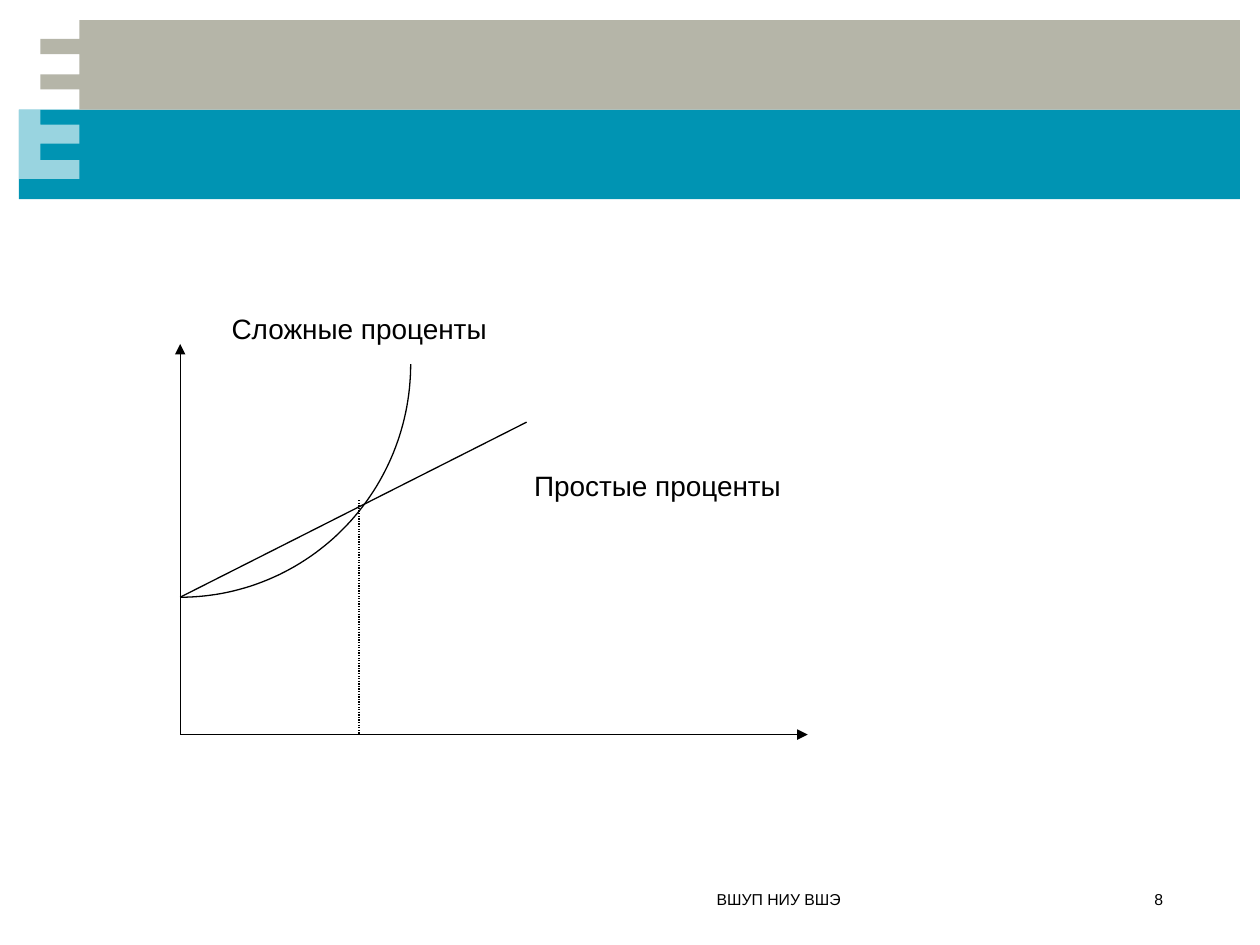
from math import cos, pi, sin

from pptx import Presentation
from pptx.dml.color import RGBColor
from pptx.enum.dml import MSO_LINE_DASH_STYLE as Dash
from pptx.enum.shapes import MSO_CONNECTOR as Connector, MSO_SHAPE as Shape
from pptx.enum.text import MSO_ANCHOR as Anchor, PP_ALIGN as Align
from pptx.oxml.ns import qn
from pptx.util import Inches, Pt
from lxml.etree import SubElement

BLACK, WHITE, TEAL, STONE = "000000", "FFFFFF", "0094B3", "B5B5A8"


def paint(fmt, colour):
    fmt.solid()
    fmt.fore_color.rgb = RGBColor.from_string(colour)


def outline(points, closed=True):
    corners = [(Inches(x), Inches(y)) for x, y in points]
    builder = slide.shapes.build_freeform(*corners[0])
    builder.add_line_segments(corners[1:], close=closed)
    drawn = builder.convert_to_shape()
    drawn.shadow.inherit = False
    return drawn


prs = Presentation()
prs.slide_width, prs.slide_height = Inches(10), Inches(7.5)
slide = prs.slides.add_slide(prs.slide_layouts[6])

teal_band = slide.shapes.add_shape(
    Shape.RECTANGLE, Inches(0.15), Inches(0.87), Inches(9.69), Inches(0.71))
teal_band.shadow.inherit = False
paint(teal_band.fill, TEAL)
teal_band.line.fill.background()

stone_band = outline([
    (0.63, 0.16), (9.84, 0.16), (9.84, 0.87), (0.63, 0.87), (0.63, 0.71), (0.32, 0.71),
    (0.32, 0.59), (0.63, 0.59), (0.63, 0.43), (0.32, 0.43), (0.32, 0.31), (0.63, 0.31)])
pale_comb = outline([
    (0.63, 1.42), (0.63, 1.27), (0.32, 1.27), (0.32, 1.14), (0.63, 1.14),
    (0.63, 0.99), (0.32, 0.99), (0.32, 0.87), (0.15, 0.87), (0.15, 1.42)])
for emblem, colour in [(stone_band, STONE), (pale_comb, WHITE)]:
    paint(emblem.fill, colour)
    emblem.line.fill.background()
white = pale_comb.fill._xPr.find(qn("a:solidFill"))[0]
SubElement(white, qn("a:alpha"), val="60000")

origin_x, origin_y, start_y = 1.43, 5.83, 4.74
for begin, end, arrow, dash in [
    ((origin_x, origin_y), (origin_x, 2.73), True, None),
    ((origin_x, origin_y), (6.41, origin_y), True, None),
    ((origin_x, start_y), (4.18, 3.35), False, None),
    ((2.85, 3.97), (2.85, origin_y), False, Dash.ROUND_DOT),
]:
    stroke = slide.shapes.add_connector(
        Connector.STRAIGHT, *(Inches(v) for v in begin + end))
    paint(stroke.line.fill, BLACK)
    stroke.line.width = Pt(0.75)
    if dash:
        stroke.line.dash_style = dash
    if arrow:
        SubElement(stroke.line._get_or_add_ln(), qn("a:tailEnd"), type="triangle")
    SubElement(stroke._element.spPr, qn("a:effectLst"))

radius_x, radius_y, steps = 1.83, 1.85, 60
angles = [pi / 2 * i / steps for i in range(steps + 1)]
compound_curve = outline(
    [(origin_x + radius_x * sin(a), start_y - radius_y * (1 - cos(a))) for a in angles],
    closed=False)
compound_curve.fill.background()
paint(compound_curve.line.fill, BLACK)
compound_curve.line.width = Pt(0.75)

label_format = {"size": Pt(16), "name": "Arial"}
footer_format = {"size": Pt(9), "name": "Arial"}
for words, box, boxed, text_format in [
    ("Простые проценты", (4.14, 3.67, 2.44, 0.62), True, label_format),
    ("Сложные проценты", (1.74, 2.42, 2.87, 0.46), True, label_format),
    ("ВШУП НИУ ВШЭ", (1.14, 7.06, 5.63, 0.15), False, footer_format),
    ("8", (8.86, 7.06, 0.47, 0.15), False, footer_format),
]:
    caption = slide.shapes.add_textbox(*(Inches(v) for v in box))
    if boxed:
        paint(caption.fill, WHITE)
        paint(caption.line.fill, WHITE)
        caption.line.width = Pt(0.75)
    frame = caption.text_frame
    frame.word_wrap = True
    frame.vertical_anchor = Anchor.TOP if boxed else Anchor.MIDDLE
    if not boxed:
        frame.margin_top = frame.margin_bottom = 0
    paragraph = frame.paragraphs[0]
    paragraph.alignment = Align.LEFT if boxed else Align.RIGHT
    run = paragraph.add_run()
    run.text = words
    for attribute, value in text_format.items():
        setattr(run.font, attribute, value)
    paint(run.font.fill, BLACK)

prs.save("out.pptx")
